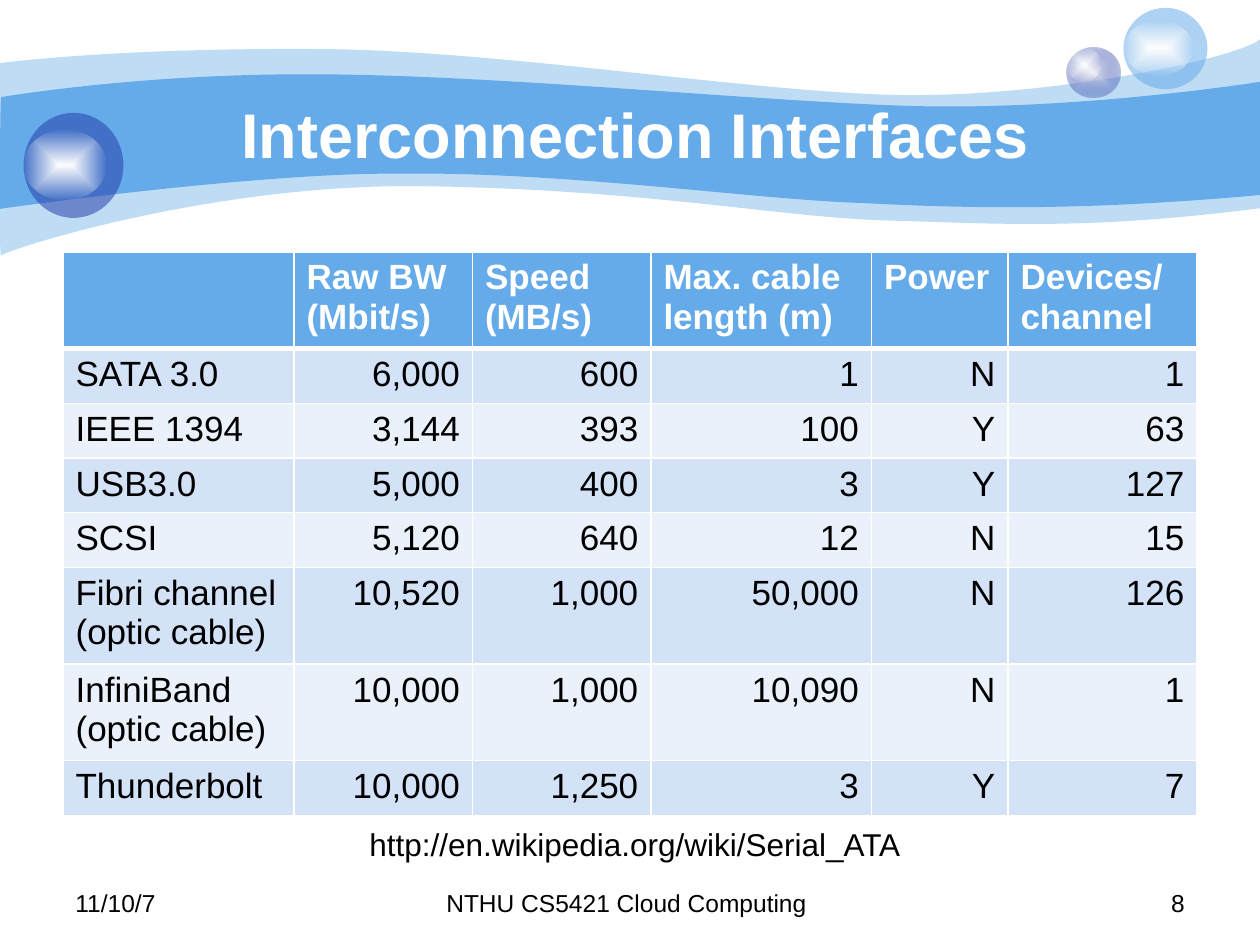
from lxml.etree import SubElement
from pptx import Presentation
from pptx.dml.color import RGBColor
from pptx.enum.shapes import MSO_SHAPE
from pptx.enum.text import MSO_ANCHOR, PP_ALIGN
from pptx.oxml.ns import qn
from pptx.util import Pt

COLORS = {
    "white": "FFFFFF",
    "black": "000000",
    "sky": "65AAE9",
    "navy": "233DA9",
    "mist": "E1E2ED",
    "odd_row": "D3E2F7",
    "even_row": "EAF1FB",
}

# Wave outlines in points: a start, then segments that are either three
# Bézier points or the single end of a straight edge.
PALE_WAVE = [
    [(0, 36)], [(17, 34), (77, 27.5), (178, 28)], [(278, 28), (414, 50.5), (503, 54)],
    [(592, 57.5), (706, 34), (720, 22.5)], [(720, 119)],
    [(618, 132), (567, 127.5), (507.5, 126)], [(448, 124.5), (371, 108.5), (247, 106.5)],
    [(124, 103.5), (3, 143), (0.7, 146)], [(-0.7, 150), (0, 54), (0, 36)],
]
DEEP_WAVE = [
    [(0.7, 55.5)], [(1.4, 55.5), (79, 42), (178.5, 42.5)],
    [(278, 42.5), (428.5, 57.5), (517, 60.5)], [(605.5, 63.5), (703, 49.5), (720, 46.8)],
    [(720, 111.5)], [(614, 121), (551, 119), (491, 116)],
    [(431, 114), (322, 98), (228, 99.3)], [(146, 98.6), (-1.4, 119.5), (-0.7, 119.5)],
    [(0, 119.5), (0, 55.5), (0.7, 55.5)],
]

COLUMN_WIDTHS = [132, 102, 102, 126, 78, 108]
ONE_LINE, TWO_LINES = 29.6, 51.9
HEADER = ["", "Raw BW (Mbit/s)", "Speed (MB/s)", "Max. cable length (m)", "Power", "Devices/ channel"]
INTERFACES = [
    ["SATA 3.0", "6,000", "600", "1", "N", "1"],
    ["IEEE 1394", "3,144", "393", "100", "Y", "63"],
    ["USB3.0", "5,000", "400", "3", "Y", "127"],
    ["SCSI", "5,120", "640", "12", "N", "15"],
    ["Fibri channel\n(optic cable)", "10,520", "1,000", "50,000", "N", "126"],
    ["InfiniBand\n(optic cable)", "10,000", "1,000", "10,090", "N", "1"],
    ["Thunderbolt", "10,000", "1,250", "3", "Y", "7"],
]


def rgb(color):
    return RGBColor.from_string(COLORS[color])


def add_color(parent, color, alpha=100):
    element = SubElement(parent, qn("a:srgbClr"), val=COLORS[color])
    if alpha < 100:
        SubElement(element, qn("a:alpha"), val=str(alpha * 1000))


def fill_solid(shape, color, alpha=100):
    shape.shadow.inherit = False
    shape.line.fill.background()
    shape.fill.solid()
    shape.fill.fore_color.rgb = rgb(color)
    if alpha < 100:
        element = shape.element.spPr.find(qn("a:solidFill")).find(qn("a:srgbClr"))
        SubElement(element, qn("a:alpha"), val=str(alpha * 1000))


def fill_glow(shape, center, edge, edge_alpha):
    """Fill with a gradient that runs from the middle to the outline."""
    fill_solid(shape, center)
    properties = shape.element.spPr
    solid = properties.find(qn("a:solidFill"))
    gradient = SubElement(properties, qn("a:gradFill"), rotWithShape="1")
    properties.replace(solid, gradient)
    stops = SubElement(gradient, qn("a:gsLst"))
    for position, color, alpha in [(0, center, 100), (100000, edge, edge_alpha)]:
        add_color(SubElement(stops, qn("a:gs"), pos=str(position)), color, alpha)
    direction = SubElement(gradient, qn("a:path"), path="shape")
    SubElement(direction, qn("a:fillToRect"), l="50000", t="50000", r="50000", b="50000")


def add_wave(page, segments, color, alpha=100):
    """Build the outline from segment ends, then bend its edges into curves."""
    ends = [(Pt(x), Pt(y)) for x, y in (segment[-1] for segment in segments)]
    builder = page.shapes.build_freeform(*ends[0])
    builder.add_line_segments(ends[1:], close=True)
    wave = builder.convert_to_shape()
    edges = list(wave.element.iter(qn("a:lnTo")))
    for edge, segment in zip(edges, segments[1:]):
        if len(segment) == 3:
            outline = edge.getparent()
            curve = SubElement(outline, qn("a:cubicBezTo"))
            for x, y in segment:
                SubElement(curve, qn("a:pt"), x=str(Pt(x) - wave.left), y=str(Pt(y) - wave.top))
            outline.replace(edge, curve)
    fill_solid(wave, color, alpha)


def add_bubble(page, body_frame, shine_frame):
    """Add a grouped ball and highlight, and return the ball for filling."""
    group = page.shapes.add_group_shape()
    body, shine = [
        group.shapes.add_shape(MSO_SHAPE.OVAL, *map(Pt, frame))
        for frame in (body_frame, shine_frame)
    ]
    fill_glow(shine, "white", "white", 0)
    return body


def style_para(para, size, color="black", bold=False, align=PP_ALIGN.LEFT):
    para.alignment = align
    formats = {"name": "Arial", "size": Pt(size), "bold": bold}
    for name, value in formats.items():
        setattr(para.font, name, value)
    para.font.color.rgb = rgb(color)


def add_text(page, frame, text, size, wrap=True, anchor=MSO_ANCHOR.TOP, **style):
    box = page.shapes.add_textbox(*map(Pt, frame))
    box.text_frame.word_wrap = wrap
    box.text_frame.vertical_anchor = anchor
    para = box.text_frame.paragraphs[0]
    para.text = text
    style_para(para, size, **style)


def set_borders(cell, top, bottom):
    properties = cell._tc.get_or_add_tcPr()
    for side, width in {"L": 1, "R": 1, "T": top, "B": bottom}.items():
        line = SubElement(properties, qn(f"a:ln{side}"), w=str(Pt(width)))
        add_color(SubElement(line, qn("a:solidFill")), "white")


def fill_cell(cell, text, background, **style):
    cell.fill.solid()
    cell.fill.fore_color.rgb = rgb(background)
    cell.text = text
    for para in cell.text_frame.paragraphs:
        style_para(para, 20, **style)


def add_interface_table(page):
    rows = [HEADER] + INTERFACES
    heights = [TWO_LINES if row is HEADER or "\n" in row[0] else ONE_LINE for row in rows]
    table = page.shapes.add_table(
        len(rows), len(HEADER), Pt(36), Pt(144), Pt(sum(COLUMN_WIDTHS)), Pt(sum(heights))
    ).table
    for column, width in zip(table.columns, COLUMN_WIDTHS):
        column.width = Pt(width)
    for r, values in enumerate(rows):
        table.rows[r].height = Pt(heights[r])
        for c, value in enumerate(values):
            cell = table.cell(r, c)
            set_borders(cell, top=3 if r == 1 else 1, bottom=3 if r == 0 else 1)
            if r == 0:
                fill_cell(cell, value, "sky", color="white", bold=True)
            else:
                fill_cell(cell, value, "odd_row" if r % 2 else "even_row",
                          align=PP_ALIGN.RIGHT if c else PP_ALIGN.LEFT)


def main():
    deck = Presentation()
    deck.slide_width, deck.slide_height = Pt(720), Pt(540)
    page = deck.slides.add_slide(deck.slide_layouts[6])

    add_wave(page, PALE_WAVE, "sky", 41)
    add_wave(page, DEEP_WAVE, "sky")
    small = add_bubble(page, (609.5, 27, 30.5, 29), (609.5, 27, 20, 19.5))
    fill_glow(small, "mist", "navy", 31)
    fill_solid(add_bubble(page, (642, 4.5, 48, 46.5), (642, 12, 40, 31)), "sky", 53)
    fill_solid(add_bubble(page, (13.5, 64.5, 57, 60), (13.5, 74, 47.5, 40.5)), "navy", 53)

    add_text(page, (72, 54, 582, 44.5), "Interconnection Interfaces", 36,
             anchor=MSO_ANCHOR.MIDDLE, color="white", bold=True, align=PP_ALIGN.CENTER)
    add_interface_table(page)
    add_text(page, (516, 504, 168, 25), "8", 14, align=PP_ALIGN.RIGHT)
    add_text(page, (204, 468, 320.5, 29), "http://en.wikipedia.org/wiki/Serial_ATA", 18, wrap=False)
    add_text(page, (36, 504, 168, 25), "11/10/7", 14)
    add_text(page, (246, 504, 228, 25), "NTHU CS5421 Cloud Computing ", 14, align=PP_ALIGN.CENTER)
    deck.save("out.pptx")


if __name__ == "__main__":
    main()
